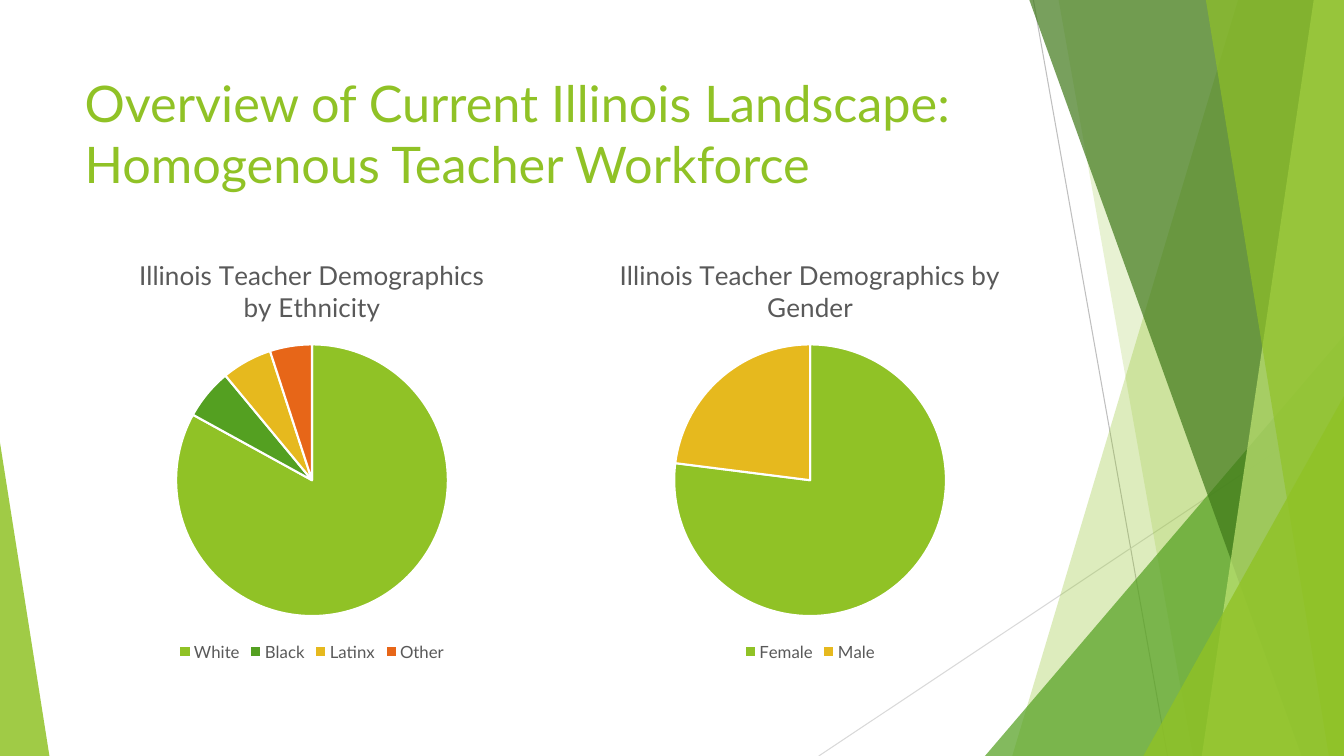
"""Build the slide on the homogenous Illinois teacher workforce."""
from pptx import Presentation
from pptx.chart.data import CategoryChartData
from pptx.dml.color import RGBColor
from pptx.enum.chart import XL_CHART_TYPE, XL_LEGEND_POSITION
from pptx.enum.shapes import MSO_CONNECTOR, MSO_SHAPE
from pptx.enum.text import MSO_ANCHOR, MSO_AUTO_SIZE, PP_ALIGN
from pptx.oxml.ns import qn
from pptx.util import Inches, Pt
from lxml import etree

PIE = XL_CHART_TYPE.PIE
LEGEND_BOTTOM = XL_LEGEND_POSITION.BOTTOM
STRAIGHT = MSO_CONNECTOR.STRAIGHT
TRIANGLE = MSO_SHAPE.ISOSCELES_TRIANGLE
TOP = MSO_ANCHOR.TOP
NO_AUTOFIT = MSO_AUTO_SIZE.NONE
LEFT = PP_ALIGN.LEFT

WIDTH, HEIGHT = Inches(13.33), Inches(7.5)
TITLE_ONLY = 5
FONT = "Lato"
COLOURS = {
    "lime": "90C226", "green": "54A021", "forest": "3F7819", "pale": "C0E474",
    "gold": "E6B91E", "orange": "E76618", "text": "595959",
    "grey": "BFBFBF", "light grey": "D9D9D9", "white": "FFFFFF",
}


def colour(name):
    """Return the named palette colour."""
    return RGBColor.from_string(COLOURS[name])


def across(percent):
    """Return a share of the slide width."""
    return round(WIDTH * percent / 100)


def down(percent):
    """Return a share of the slide height."""
    return round(HEIGHT * percent / 100)


def area(left, top, width, height):
    """Return a rectangle given in shares of the slide."""
    return across(left), down(top), across(width), down(height)


def set_font(font, size, name):
    """Give a font its face, size and colour."""
    font.name, font.size, font.bold = FONT, Pt(size), False
    font.color.rgb = colour(name)


def paint(shape, name, opacity):
    """Fill a facet with a translucent colour and no outline."""
    shape.shadow.inherit = False
    shape.fill.solid()
    shape.fill.fore_color.rgb = colour(name)
    shape.line.fill.background()
    shade = shape.element.xpath(".//a:solidFill/a:srgbClr")[0]
    etree.SubElement(shade, qn("a:alpha"), val=str(opacity * 1000))


def add_ray(page, start, end, name):
    """Draw a thin straight line between two points."""
    ray = page.shapes.add_connector(
        STRAIGHT, across(start[0]), down(start[1]), across(end[0]), down(end[1]))
    ray.line.color.rgb = colour(name)
    ray.line.width = Pt(0.75)
    etree.SubElement(ray.element.spPr, qn("a:effectLst"))


def add_band(page, top, bottom, name, opacity):
    """Draw a full-height band with a slanted left side, up to the right edge."""
    builder = page.shapes.build_freeform(across(top), 0)
    builder.add_line_segments(
        [(WIDTH, 0), (WIDTH, HEIGHT), (across(bottom), HEIGHT)], close=True)
    paint(builder.convert_to_shape(), name, opacity)


def add_corner(page, left, top, width, apex, name, opacity):
    """Draw a right triangle standing on the bottom edge."""
    corner = page.shapes.add_shape(TRIANGLE, *area(left, top, width, 100 - top))
    corner.adjustments[0] = apex
    paint(corner, name, opacity)


def add_facets(page):
    """Draw the decoration from back to front."""
    add_ray(page, (76.89, 0), (86.87, 100), "grey")
    add_ray(page, (100, 53.73), (60.92, 100), "light grey")
    add_band(page, 92.12, 75.32, "lime", 30)
    add_band(page, 78.77, 88.75, "lime", 20)
    add_corner(page, 73.29, 44.4, 26.71, 1, "green", 72)
    add_band(page, 76.59, 96.85, "forest", 70)
    add_band(page, 97.75, 89.42, "pale", 70)
    add_band(page, 89.72, 98.87, "lime", 65)
    add_corner(page, 85.07, 52.4, 14.93, 1, "lime", 80)
    add_corner(page, 0, 58.53, 3.68, 0, "lime", 85)


def set_title(page, words):
    """Place and format the slide title."""
    title = page.shapes.title
    title.left, title.top, title.width, title.height = area(5.55, 8.93, 70.52, 19.2)
    frame = title.text_frame
    frame.text = words
    frame.word_wrap = True
    frame.auto_size = NO_AUTOFIT
    frame.vertical_anchor = TOP
    para = frame.paragraphs[0]
    para.alignment = LEFT
    set_font(para.font, 36, "lime")


def add_pie(page, left, width, heading, slices):
    """Add a pie chart of (label, value, colour) slices."""
    labels, values, names = zip(*slices)
    data = CategoryChartData()
    data.categories = labels
    data.add_series(heading, values)
    chart = page.shapes.add_chart(PIE, *area(left, 31.47, width, 56.53), data).chart
    set_font(chart.font, 10, "text")
    chart.has_title = True
    chart.chart_title.include_in_layout = False
    chart.chart_title.text_frame.text = heading
    set_font(chart.chart_title.text_frame.paragraphs[0].font, 18.6, "text")
    chart.has_legend = True
    chart.legend.position = LEGEND_BOTTOM
    chart.legend.include_in_layout = False
    set_font(chart.legend.font, 12, "text")
    plot = chart.plots[0]
    plot.vary_by_categories = True
    for index, name in enumerate(names):
        style = plot.series[0].points[index].format
        style.fill.solid()
        style.fill.fore_color.rgb = colour(name)
        style.line.color.rgb = colour("white")
        style.line.width = Pt(1.5)


def main():
    """Build and save the deck."""
    deck = Presentation()
    deck.slide_width, deck.slide_height = WIDTH, HEIGHT
    page = deck.slides.add_slide(deck.slide_layouts[TITLE_ONLY])
    add_facets(page)
    set_title(page, "Overview of Current Illinois Landscape: "
                    "Homogenous Teacher Workforce")
    add_pie(page, 5.55, 35.33, "Illinois Teacher Demographics by Ethnicity",
            [("White", 83, "lime"), ("Black", 6, "green"),
             ("Latinx", 6, "gold"), ("Other", 5, "orange")])
    add_pie(page, 39.08, 42.39, "Illinois Teacher Demographics by Gender",
            [("Female", 77, "lime"), ("Male", 23, "gold")])
    deck.save("out.pptx")


if __name__ == "__main__":
    main()
